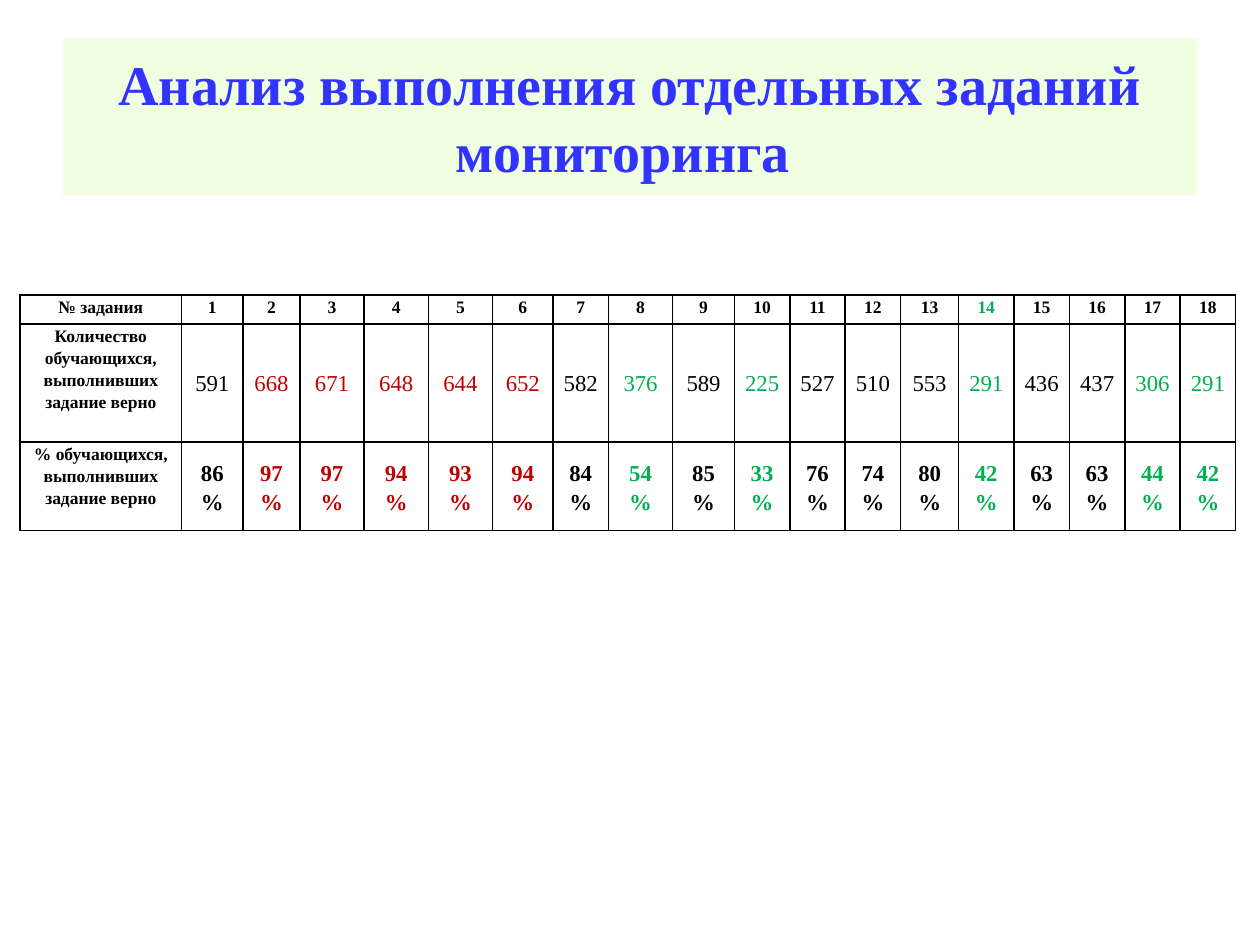
from dataclasses import dataclass

from lxml.etree import SubElement
from pptx import Presentation
from pptx.dml.color import RGBColor as RGB
from pptx.enum.text import MSO_ANCHOR as Anchor, MSO_AUTO_SIZE as AutoSize, PP_ALIGN as Align
from pptx.oxml import parse_xml
from pptx.oxml.ns import nsdecls, qn
from pptx.util import Inches, Pt


@dataclass(frozen=True)
class Theme:
    font: str = "Times New Roman"
    title_size: int = 32
    label_size: int = 10
    value_size: int = 13
    title: RGB = RGB.from_string("3333FF")
    banner: RGB = RGB.from_string("CCFF99")
    banner_alpha: int = 28
    normal: RGB = RGB.from_string("000000")
    high: RGB = RGB.from_string("C00000")
    low: RGB = RGB.from_string("00B050")
    border: str = "000000"
    border_width: int = 1


@dataclass(frozen=True)
class Task:
    number: int
    solved: int
    percent: int
    width: float
    sign_below: bool = False  # percent sign in its own paragraph

    @property
    def colour(self) -> RGB:
        if self.percent > 90:
            return THEME.high
        return THEME.low if self.percent < 60 else THEME.normal


@dataclass(frozen=True)
class CellStyle:
    size: int
    bold: bool = True
    anchor: Anchor = Anchor.TOP
    line_spacing: float = 1.15
    space_after: int = 0


THEME = Theme()
LABEL = CellStyle(THEME.label_size)
COUNT = CellStyle(THEME.value_size, False, Anchor.MIDDLE, 1.07, 8)
PERCENT = CellStyle(THEME.value_size, True, Anchor.MIDDLE)

ROW_LABELS = (
    "№ задания",
    "Количество обучающихся, выполнивших задание верно",
    "% обучающихся, выполнивших задание верно",
)
ROW_HEIGHTS = (0.23, 0.94, 0.7)
LABEL_WIDTH = 1.28
MARKED_TASK = 14  # the only coloured number in the header
TASKS = (
    Task(1, 591, 86, 0.49),
    Task(2, 668, 97, 0.45),
    Task(3, 671, 97, 0.51, True),
    Task(4, 648, 94, 0.51, True),
    Task(5, 644, 93, 0.51, True),
    Task(6, 652, 94, 0.48),
    Task(7, 582, 84, 0.44),
    Task(8, 376, 54, 0.51, True),
    Task(9, 589, 85, 0.49),
    Task(10, 225, 33, 0.44),
    Task(11, 527, 76, 0.44),
    Task(12, 510, 74, 0.44),
    Task(13, 553, 80, 0.46),
    Task(14, 291, 42, 0.44),
    Task(15, 436, 63, 0.44),
    Task(16, 437, 63, 0.44),
    Task(17, 306, 44, 0.44),
    Task(18, 291, 42, 0.44),
)


def format_run(run, size: int, colour: RGB, bold: bool) -> None:
    run.font.name = THEME.font
    run.font.size = Pt(size)
    run.font.bold = bold
    run.font.color.rgb = colour


def add_borders(cell) -> None:
    properties = cell._tc.get_or_add_tcPr()
    for index, side in enumerate(("lnL", "lnR", "lnT", "lnB")):
        properties.insert(index, parse_xml(
            f'<a:{side} {nsdecls("a")} w="{Pt(THEME.border_width)}"><a:solidFill>'
            f'<a:srgbClr val="{THEME.border}"/></a:solidFill></a:{side}>'))


def fill_cell(cell, text: str, style: CellStyle, colour: RGB = THEME.normal) -> None:
    cell.margin_left = cell.margin_right = Inches(0.07)
    cell.margin_top = cell.margin_bottom = 0
    cell.vertical_anchor = style.anchor
    cell.fill.background()
    add_borders(cell)
    cell.text_frame.text = text
    for paragraph in cell.text_frame.paragraphs:
        paragraph.alignment = Align.CENTER
        paragraph.line_spacing = style.line_spacing
        paragraph.space_after = Pt(style.space_after)
        for run in paragraph.runs:
            format_run(run, style.size, colour, style.bold)


def add_title(slide) -> None:
    title = slide.shapes.title
    title.left, title.top = Inches(0.5), Inches(0.3)
    title.width, title.height = Inches(9), Inches(1.25)
    title.fill.solid()
    title.fill.fore_color.rgb = THEME.banner
    banner_colour = title.fill._xPr.find(qn("a:solidFill"))[0]
    SubElement(banner_colour, qn("a:alpha"), val=str(THEME.banner_alpha * 1000))
    frame = title.text_frame
    frame.text = "Анализ выполнения отдельных заданий мониторинга "
    frame.auto_size = AutoSize.NONE
    frame.vertical_anchor = Anchor.MIDDLE
    heading = frame.paragraphs[0]
    heading.alignment = Align.CENTER
    format_run(heading.runs[0], THEME.title_size, THEME.title, True)


def add_results(slide) -> None:
    widths = (LABEL_WIDTH, *(task.width for task in TASKS))
    results = slide.shapes.add_table(
        len(ROW_HEIGHTS), len(widths), Inches(0.16), Inches(2.34),
        Inches(sum(widths)), Inches(sum(ROW_HEIGHTS))).table
    results.first_row = results.horz_banding = False
    for column, width in zip(results.columns, widths):
        column.width = Inches(width)
    for row, height in zip(results.rows, ROW_HEIGHTS):
        row.height = Inches(height)

    # Row labels
    for row, label in enumerate(ROW_LABELS):
        fill_cell(results.cell(row, 0), label, LABEL)

    # One column per task
    for column, task in enumerate(TASKS, start=1):
        number_colour = THEME.low if task.number == MARKED_TASK else THEME.normal
        separator = "\n" if task.sign_below else ""
        fill_cell(results.cell(0, column), str(task.number), LABEL, number_colour)
        fill_cell(results.cell(1, column), str(task.solved), COUNT, task.colour)
        fill_cell(results.cell(2, column), f"{task.percent}{separator}%", PERCENT, task.colour)


def main() -> None:
    deck = Presentation()
    deck.slide_width, deck.slide_height = Inches(10), Inches(7.5)
    slide = deck.slides.add_slide(deck.slide_layouts.get_by_name("Title Only"))
    add_title(slide)
    add_results(slide)
    deck.save("out.pptx")


if __name__ == "__main__":
    main()
